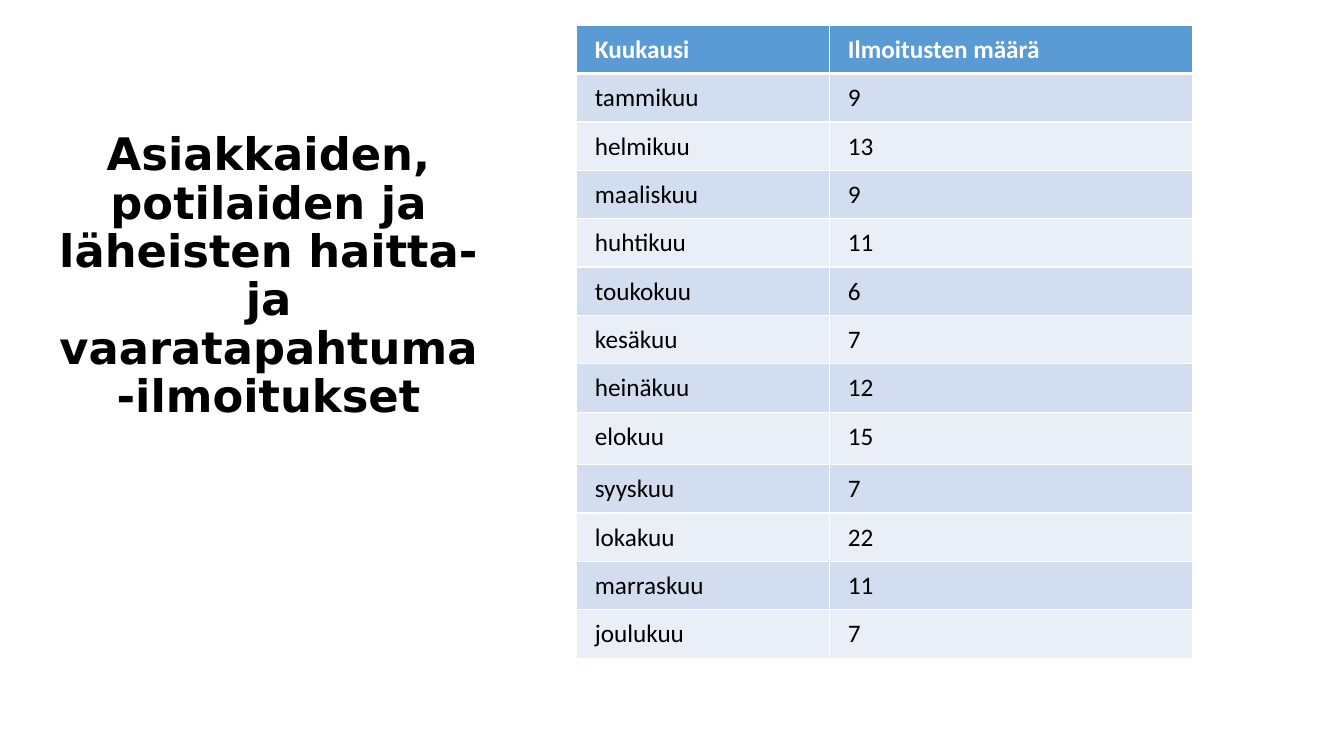
from lxml import etree
from pptx import Presentation
from pptx.dml.color import RGBColor
from pptx.enum.text import MSO_ANCHOR, PP_ALIGN
from pptx.oxml.ns import qn
from pptx.util import Inches, Pt

LEFT, CENTER = PP_ALIGN.LEFT, PP_ALIGN.CENTER
TOP, BOTTOM = MSO_ANCHOR.TOP, MSO_ANCHOR.BOTTOM

BLACK = RGBColor(0x00, 0x00, 0x00)
WHITE = RGBColor(0xFF, 0xFF, 0xFF)
HEADER_BLUE = RGBColor(0x5B, 0x9B, 0xD5)
BAND_DARK = RGBColor(0xD2, 0xDE, 0xEF)
BAND_LIGHT = RGBColor(0xEA, 0xEF, 0xF7)

HEADINGS = ("Kuukausi", "Ilmoitusten määrä")
REPORTS = (
    ("tammikuu", 9),
    ("helmikuu", 13),
    ("maaliskuu", 9),
    ("huhtikuu", 11),
    ("toukokuu", 6),
    ("kesäkuu", 7),
    ("heinäkuu", 12),
    ("elokuu", 15),
    ("syyskuu", 7),
    ("lokakuu", 22),
    ("marraskuu", 11),
    ("joulukuu", 7),
)
COLUMN_WIDTHS = (2.51, 3.6)
ROW_HEIGHT = 0.48
TALL_ROWS = {"elokuu": 0.52}


def write(frame, text, *, font, size, color=BLACK, bold=False, align=LEFT, spacing=None):
    paragraph = frame.paragraphs[0]
    paragraph.alignment = align
    paragraph.line_spacing = spacing
    run = paragraph.add_run()
    run.text = text
    run.font.name = font
    run.font.size = Pt(size)
    run.font.bold = bold
    run.font.color.rgb = color


class SlideBuilder:
    title_font = "DejaVu Sans"
    table_font = "Calibri"

    def __init__(self, slide):
        self.slide = slide

    def title(self, text, left, top, width, height):
        frame = self.slide.shapes.add_textbox(
            Inches(left), Inches(top), Inches(width), Inches(height)
        ).text_frame
        frame.word_wrap = True
        frame.vertical_anchor = BOTTOM
        write(frame, text, font=self.title_font, size=32, bold=True,
              align=CENTER, spacing=0.9)

    def border(self, cell, side, width):
        line = etree.SubElement(cell._tc.get_or_add_tcPr(), qn(f"a:ln{side}"),
                                w=str(Pt(width)))
        fill = etree.SubElement(line, qn("a:solidFill"))
        etree.SubElement(fill, qn("a:srgbClr"), val=str(WHITE))

    def cell(self, cell, text, fill, top_line, bottom_line, **text_format):
        cell.margin_left = cell.margin_right = Inches(0.18)
        cell.margin_top = cell.margin_bottom = Inches(0.09)
        cell.vertical_anchor = TOP
        for side, width in (("L", 1), ("R", 1), ("T", top_line), ("B", bottom_line)):
            self.border(cell, side, width)
        cell.fill.solid()
        cell.fill.fore_color.rgb = fill
        write(cell.text_frame, text, font=self.table_font, size=18, **text_format)

    def monthly_table(self, left, top):
        rows = (HEADINGS, *REPORTS)
        heights = [TALL_ROWS.get(month, ROW_HEIGHT) for month, _ in rows]
        table = self.slide.shapes.add_table(
            len(rows), len(HEADINGS), Inches(left), Inches(top),
            Inches(sum(COLUMN_WIDTHS)), Inches(sum(heights))
        ).table
        for column, width in zip(table.columns, COLUMN_WIDTHS):
            column.width = Inches(width)
        for index, (values, height) in enumerate(zip(rows, heights)):
            table.rows[index].height = Inches(height)
            header = index == 0
            band = BAND_DARK if index % 2 else BAND_LIGHT
            for column, value in enumerate(values):
                self.cell(
                    table.cell(index, column), str(value),
                    HEADER_BLUE if header else band,
                    top_line=3 if index == 1 else 1,
                    bottom_line=3 if header else 1,
                    color=WHITE if header else BLACK,
                    bold=header,
                )


def main():
    presentation = Presentation()
    presentation.slide_width = Inches(13.33)
    presentation.slide_height = Inches(7.5)
    builder = SlideBuilder(presentation.slides.add_slide(presentation.slide_layouts[6]))
    builder.title(
        "Asiakkaiden, potilaiden ja läheisten haitta- ja vaaratapahtuma-ilmoitukset",
        0.4, 0.85, 4.53, 3.39,
    )
    builder.monthly_table(5.72, 0.25)
    presentation.save("out.pptx")


if __name__ == "__main__":
    main()
